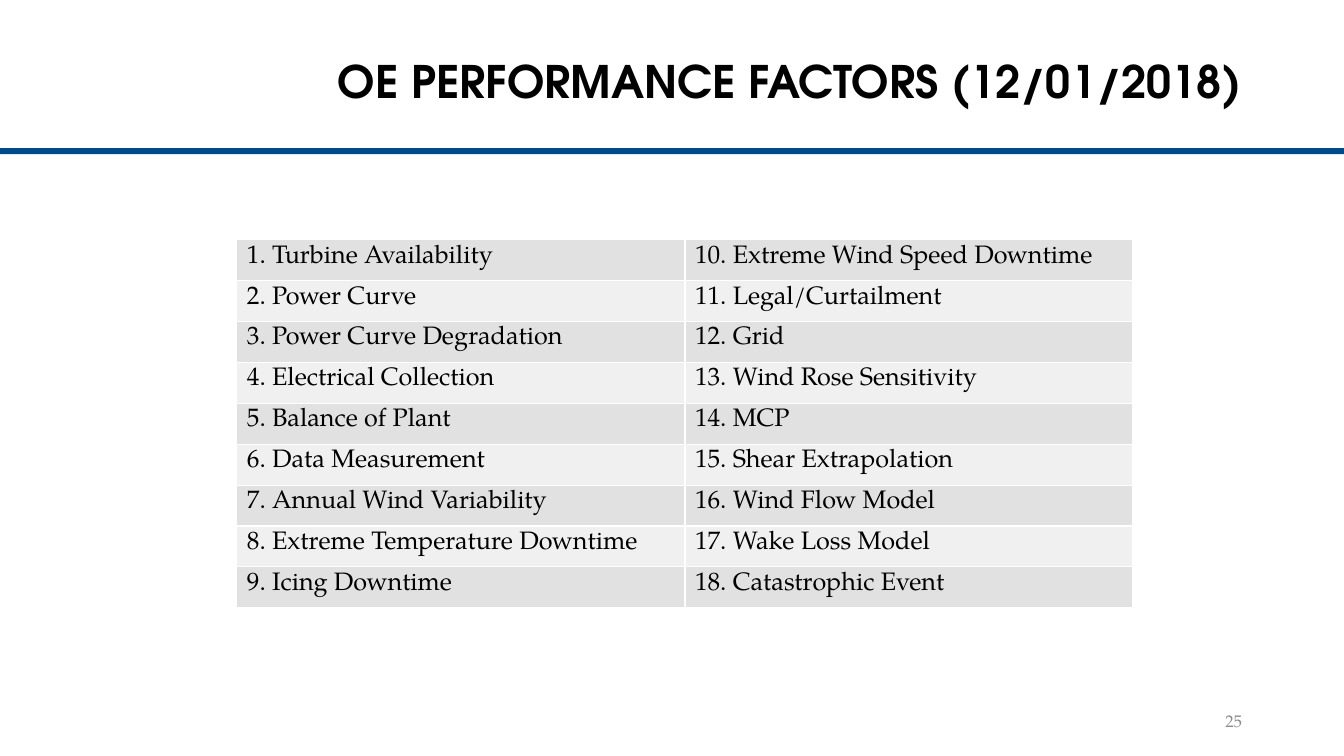
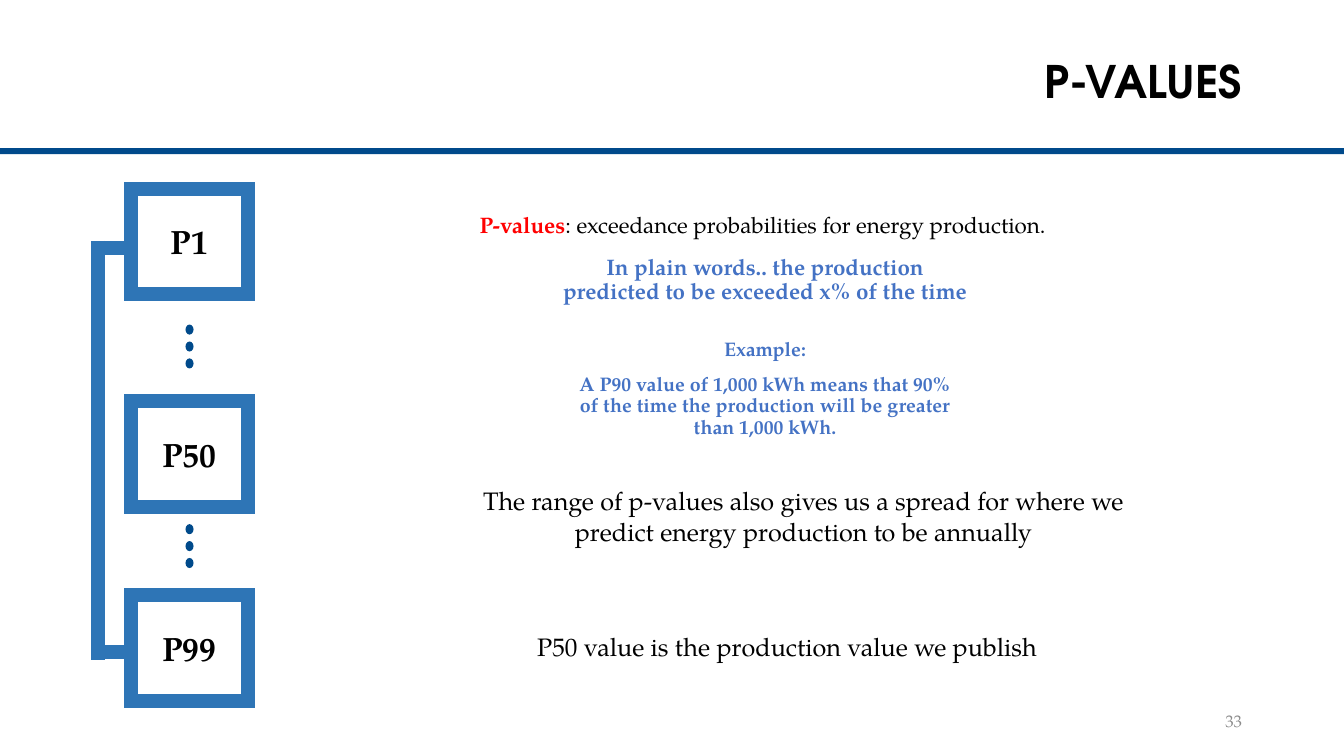
from collections import namedtuple

from lxml import etree
from pptx import Presentation
from pptx import util as u
from pptx.dml.color import RGBColor
from pptx.enum import shapes, text
from pptx.oxml.ns import qn

# The grid has square cells, ten to the inch.
CELL = u.Inches(0.1)
COLUMNS, ROWS = 133.33, 75

BLACK = RGBColor(0x00, 0x00, 0x00)
WHITE = RGBColor(0xFF, 0xFF, 0xFF)
GREY = RGBColor(0x8C, 0x8C, 0x8C)
RED = RGBColor(0xFF, 0x00, 0x00)
RULE_BLUE = RGBColor(0x00, 0x4A, 0x8B)
FRAME_BLUE = RGBColor(0x2E, 0x75, 0xB6)
NOTE_BLUE = RGBColor(0x44, 0x72, 0xC4)
BANDS = (RGBColor(0xE1, 0xE1, 0xE1), RGBColor(0xF0, 0xF0, 0xF0))

HEADING_FONT, BODY_FONT = "TeX Gyre Adventor", "TeX Gyre Pagella"
FRAME_WIDTH = u.Pt(10)
LEFT, CENTER, RIGHT = (text.PP_ALIGN.LEFT, text.PP_ALIGN.CENTER,
                       text.PP_ALIGN.RIGHT)
TOP, MIDDLE = text.MSO_ANCHOR.TOP, text.MSO_ANCHOR.MIDDLE

Box = namedtuple("Box", "left top width height")
Style = namedtuple("Style", "font color")

FACTORS = [
    "Turbine Availability", "Power Curve", "Power Curve Degradation",
    "Electrical Collection", "Balance of Plant", "Data Measurement",
    "Annual Wind Variability", "Extreme Temperature Downtime",
    "Icing Downtime", "Extreme Wind Speed Downtime", "Legal/Curtailment",
    "Grid", "Wind Rose Sensitivity", "MCP", "Shear Extrapolation",
    "Wind Flow Model", "Wake Loss Model", "Catastrophic Event",
]


def make_style(size, color=BLACK, bold=False, name=BODY_FONT):
    return Style({"name": name, "size": u.Pt(size), "bold": bold}, color)


TITLE = make_style(32, bold=True, name=HEADING_FONT)
PAGE_NUMBER = make_style(12, GREY)
BODY = make_style(18)
DEFINITION = make_style(16)
TERM = make_style(16, RED, bold=True)
PLAIN_WORDS = make_style(16, NOTE_BLUE, bold=True)
EXAMPLE = make_style(14, NOTE_BLUE, bold=True)
LABEL = make_style(24, bold=True)


def cells(*counts):
    return [round(count * CELL) for count in counts]


def inside(box, left, top, width, height):
    """Box whose corner is offset from the corner of another box."""
    return Box(box.left + left, box.top + top, width, height)


def set_values(target, values):
    for name, value in values.items():
        setattr(target, name, value)


def add_run(paragraph, words, style):
    run = paragraph.add_run()
    run.text = words
    set_values(run.font, style.font)
    run.font.color.rgb = style.color


def add_text(slide, box, paragraphs, align=LEFT, anchor=TOP, **spacing):
    """Each paragraph is a list of (words, style) runs."""
    frame = slide.shapes.add_textbox(*cells(*box)).text_frame
    set_values(frame, {"word_wrap": True, "vertical_anchor": anchor})
    for index, runs in enumerate(paragraphs):
        paragraph = frame.add_paragraph() if index else frame.paragraphs[0]
        set_values(paragraph, {"alignment": align, **spacing})
        if index == 0:
            paragraph.space_before = u.Pt(0)
        for words, style in runs:
            add_run(paragraph, words, style)


def add_filled(slide, kind, box, color):
    shape = slide.shapes.add_shape(kind, *cells(*box))
    shape.shadow.inherit = False
    shape.fill.solid()
    shape.fill.fore_color.rgb = color
    shape.line.fill.background()


def add_frame(slide, box, label):
    shape = slide.shapes.add_shape(shapes.MSO_SHAPE.RECTANGLE, *cells(*box))
    shape.shadow.inherit = False
    shape.fill.background()
    shape.line.color.rgb = FRAME_BLUE
    shape.line.width = FRAME_WIDTH
    etree.SubElement(shape.line._ln, qn("a:miter"), lim="800000")
    frame = shape.text_frame
    set_values(frame, {"word_wrap": False, "vertical_anchor": MIDDLE,
                       "margin_left": 0, "margin_right": 0})
    frame.paragraphs[0].alignment = CENTER
    add_run(frame.paragraphs[0], label, LABEL)


def add_bar(slide, box):
    """Straight line from the box's first corner to its opposite one."""
    line = slide.shapes.add_connector(
        shapes.MSO_CONNECTOR.STRAIGHT,
        *cells(box.left, box.top, box.left + box.width, box.top + box.height))
    line.line.color.rgb = FRAME_BLUE
    line.line.width = FRAME_WIDTH
    etree.SubElement(line._element.spPr, qn("a:effectLst"))


def add_base_slide(presentation, title, number):
    slide = presentation.slides.add_slide(presentation.slide_layouts[6])
    add_filled(slide, shapes.MSO_SHAPE.RECTANGLE,
               Box(0, 14.7, COLUMNS, 0.6), RULE_BLUE)
    add_text(slide, Box(18.9, 4, 105.3, 8.6), [[(title, TITLE)]],
             RIGHT, MIDDLE, line_spacing=0.9)
    add_text(slide, Box(94.2, 69.5, 30, 4), [[(str(number), PAGE_NUMBER)]],
             RIGHT, MIDDLE)
    return slide


def add_borders(cell):
    properties = cell._tc.get_or_add_tcPr()
    for side in ("lnL", "lnR", "lnT", "lnB"):
        line = etree.SubElement(properties, qn(f"a:{side}"), w=str(u.Pt(1)))
        fill = etree.SubElement(line, qn("a:solidFill"))
        etree.SubElement(fill, qn("a:srgbClr"), val=str(WHITE))


def add_factor_table(slide, box, factors, column_count=2):
    """Numbered factors, running down each column in turn."""
    row_count = len(factors) // column_count
    table = slide.shapes.add_table(row_count, column_count,
                                   *cells(*box)).table
    table.first_row = False
    for row in table.rows:
        row.height = cells(box.height / row_count)[0]
    for index, factor in enumerate(factors):
        column, row = divmod(index, row_count)
        cell = table.cell(row, column)
        add_borders(cell)
        cell.fill.solid()
        cell.fill.fore_color.rgb = BANDS[row % 2]
        add_run(cell.text_frame.paragraphs[0], f"{index + 1}. {factor}", BODY)


def add_ladder(slide, box):
    """Three framed P-values, dots between them and a bracket at the left."""
    frame_left, frame_width, frame_height = 3.3, 11.6, 10.5
    for label, top in (("P1", 0), ("P50", 21.1), ("P99", 40.3)):
        add_frame(slide, inside(box, frame_left, top,
                                frame_width, frame_height), label)

    dot_width, dot_height, dot_pitch = 0.8, 1, 1.68
    dot_left = frame_left + (frame_width - dot_width) / 2
    for first_top in (13.5, 33.3):
        for index in range(3):
            add_filled(slide, shapes.MSO_SHAPE.OVAL,
                       inside(box, dot_left, first_top + index * dot_pitch,
                              dot_width, dot_height), RULE_BLUE)

    add_bar(slide, inside(box, 0, 5.2, 0, 41.6))
    for arm_top in (5.9, 46):
        add_bar(slide, inside(box, 0, arm_top, frame_left, 0))


def add_explanation(slide, box):
    add_text(slide, inside(box, 3.3, 0, 64.2, 3.7), [
        [("P-values", TERM),
         (": exceedance probabilities for energy production.", DEFINITION)]])
    note_format = {"align": CENTER, "line_spacing": 0.9,
                   "space_before": u.Pt(10)}
    add_text(slide, inside(box, 10.9, 4.4, 43.4, 8), [
        [("In plain words.. the production predicted to be exceeded "
          "x% of the time", PLAIN_WORDS)]], **note_format)
    add_text(slide, inside(box, 12.5, 12.7, 40.2, 11.6), [
        [("Example:", EXAMPLE)],
        [("A P90 value of 1,000 kWh means that 90% of the time the "
          "production will be greater than 1,000 kWh.", EXAMPLE)],
    ], **note_format)
    add_text(slide, inside(box, 0, 27.2, 72.8, 7.1), [
        [("The range of p-values also gives us a spread for where we "
          "predict energy production to be annually", BODY)]], CENTER)
    add_text(slide, inside(box, 9, 41.6, 52.9, 4), [
        [("P50 value is the production value we publish", BODY)]])


def main():
    presentation = Presentation()
    width, height = cells(COLUMNS, ROWS)
    set_values(presentation, {"slide_width": width, "slide_height": height})

    factors = add_base_slide(presentation,
                             "OE PERFORMANCE FACTORS (12/01/2018)", 25)
    add_factor_table(factors, Box(23.5, 23.8, 88.9, 36.5), FACTORS)

    p_values = add_base_slide(presentation, "P-VALUES", 33)
    add_ladder(p_values, Box(9.7, 18.7, 14.9, 50.8))
    add_explanation(p_values, Box(43.3, 20.5, 72.8, 45.6))

    presentation.save("out.pptx")


if __name__ == "__main__":
    main()
